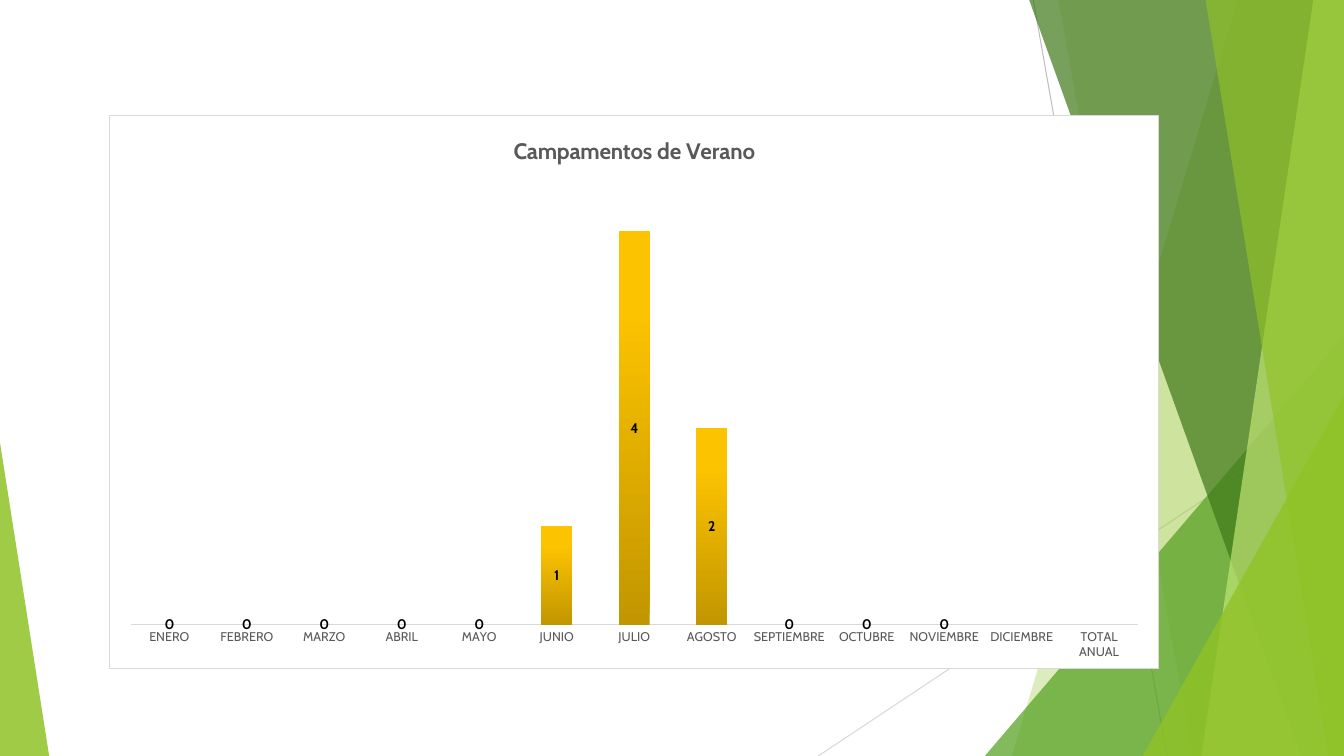
from lxml import etree
from pptx import Presentation
from pptx import util as u
from pptx.chart.data import CategoryChartData
from pptx.dml.color import RGBColor
from pptx.enum import chart as kinds, shapes
from pptx.oxml import parse_xml
from pptx.oxml.ns import nsdecls, qn

WHITE = RGBColor(0xFF, 0xFF, 0xFF)
BLACK = RGBColor(0, 0, 0)
GRAY = RGBColor(0x59, 0x59, 0x59)
PALE_GRAY = RGBColor(0xD9, 0xD9, 0xD9)
MID_GRAY = RGBColor(0xBF, 0xBF, 0xBF)
LIME = RGBColor(0x90, 0xC2, 0x26)
GREEN = RGBColor(0x54, 0xA0, 0x21)
DARK_GREEN = RGBColor(0x3F, 0x78, 0x19)
LIGHT_LIME = RGBColor(0xC0, 0xE4, 0x74)
GOLD_STOPS = [(0, RGBColor(0xC2, 0x96, 0x00)), (80, RGBColor(0xFC, 0xC3, 0x00)),
              (100, RGBColor(0xFD, 0xC4, 0x00))]
FONT = "Cabin"
WIDTH, HEIGHT = 33.87, 19.05

MONTHS = ["ENERO", "FEBRERO", "MARZO", "ABRIL", "MAYO", "JUNIO", "JULIO", "AGOSTO",
          "SEPTIEMBRE", "OCTUBRE", "NOVIEMBRE", "DICIEMBRE", "TOTAL ANUAL"]
CAMPS = [0, 0, 0, 0, 0, 1, 4, 2, 0, 0, 0, None, None]


def paint(shape, color, opacity):
    """Fill a shape without outline; opacity is a percentage."""
    shape.shadow.inherit = False
    shape.line.fill.background()
    shape.fill.solid()
    shape.fill.fore_color.rgb = color
    tint = shape.fill._xPr.find(".//" + qn("a:srgbClr"))
    etree.SubElement(tint, qn("a:alpha")).set("val", str(opacity * 1000))


def add_line(page, start, end, color):
    line = page.shapes.add_connector(shapes.MSO_CONNECTOR.STRAIGHT,
                                     *(u.Cm(value) for value in start + end))
    line.line.color.rgb = color
    line.line.width = u.Pt(0.75)
    etree.SubElement(line._element.spPr, qn("a:effectLst"))


def add_band(page, top_x, bottom_x, color, opacity):
    """Add a band from a slanted left edge to the right side of the slide."""
    top = -0.02
    corners = [(WIDTH, top), (WIDTH, HEIGHT), (bottom_x, HEIGHT)]
    builder = page.shapes.build_freeform(u.Cm(top_x), u.Cm(top))
    builder.add_line_segments([(u.Cm(x), u.Cm(y)) for x, y in corners])
    paint(builder.convert_to_shape(), color, opacity)


def add_triangle(page, left, top, width, apex, color, opacity):
    """Add a triangle standing on the bottom of the slide."""
    triangle = page.shapes.add_shape(shapes.MSO_SHAPE.ISOSCELES_TRIANGLE, u.Cm(left),
                                     u.Cm(top), u.Cm(width), u.Cm(HEIGHT - top))
    triangle.adjustments[0] = apex
    paint(triangle, color, opacity)


def add_decoration(page):
    add_line(page, (26.04, 0), (29.41, HEIGHT), MID_GRAY)
    add_line(page, (WIDTH, 10.24), (20.62, HEIGHT), PALE_GRAY)
    add_band(page, 31.19, 25.5, LIME, 30)
    add_band(page, 26.67, 30.05, LIME, 20)
    add_triangle(page, 24.82, 8.46, WIDTH - 24.82, 1, GREEN, 72)
    add_band(page, 25.93, 32.79, DARK_GREEN, 70)
    add_band(page, 33.1, 30.28, LIGHT_LIME, 70)
    add_band(page, 30.38, 33.48, LIME, 65)
    add_triangle(page, 28.8, 9.98, WIDTH - 28.8, 1, LIME, 80)
    add_triangle(page, 0, 11.15, 1.24, 0, LIME, 85)


def set_font(font, size, color, bold=False):
    font.name = FONT
    font.size = u.Pt(size)
    font.bold = bold
    font.color.rgb = color


def frame_chart(chart):
    """Give the chart a white, bordered background and a fixed plot area."""
    chart_node = chart.element.find(qn("c:chart"))
    chart_node.addnext(parse_xml(
        f'<c:spPr {nsdecls("c", "a")}>'
        f'<a:solidFill><a:srgbClr val="{WHITE}"/></a:solidFill>'
        f'<a:ln w="{u.Pt(0.75)}"><a:solidFill><a:srgbClr val="{PALE_GRAY}"/></a:solidFill></a:ln>'
        '</c:spPr>'))
    plot_area = chart_node.find(qn("c:plotArea"))
    for layout in plot_area.findall(qn("c:layout")):
        plot_area.remove(layout)
    places = "".join(f'<c:{key} val="{value}"/>' for key, value in
                     [("x", 0.02), ("y", 0.12), ("w", 0.96), ("h", 0.8)])
    plot_area.insert(0, parse_xml(
        f'<c:layout {nsdecls("c")}><c:manualLayout><c:layoutTarget val="inner"/>'
        f'<c:xMode val="edge"/><c:yMode val="edge"/>{places}</c:manualLayout></c:layout>'))


def fill_bars(series):
    """Shade the bars in gold, from dark at the foot to bright at the top."""
    series.format.fill.gradient()
    gradient = series.format.fill._xPr.find(qn("a:gradFill"))
    stops = "".join(f'<a:gs pos="{place * 1000}"><a:srgbClr val="{color}"/></a:gs>'
                    for place, color in GOLD_STOPS)
    gradient.getparent().replace(gradient, parse_xml(
        f'<a:gradFill {nsdecls("a")}><a:gsLst>{stops}</a:gsLst>'
        '<a:lin ang="16200000" scaled="0"/></a:gradFill>'))


def add_camps_chart(page, left, top, width, height):
    data = CategoryChartData()
    data.categories = MONTHS
    data.add_series("Series 1", CAMPS)
    chart = page.shapes.add_chart(kinds.XL_CHART_TYPE.COLUMN_STACKED, u.Cm(left), u.Cm(top),
                                  u.Cm(width), u.Cm(height), data).chart
    set_font(chart.font, 10, BLACK)
    chart.has_legend = False
    frame_chart(chart)

    chart.has_title = True
    chart.chart_title.include_in_layout = False
    para = chart.chart_title.text_frame.paragraphs[0]
    para.text = "Campamentos de Verano"
    set_font(para.font, 16, GRAY, bold=True)

    months = chart.category_axis
    months.major_tick_mark = kinds.XL_TICK_MARK.NONE
    months.format.line.color.rgb = PALE_GRAY
    months.format.line.width = u.Pt(1)
    set_font(months.tick_labels.font, 9, GRAY)
    counts = chart.value_axis
    counts.visible = False
    counts.has_major_gridlines = False
    counts.minimum_scale, counts.maximum_scale = 0, 4.5

    plot = chart.plots[0]
    plot.gap_width, plot.overlap = 150, 100
    plot.vary_by_categories = False
    fill_bars(plot.series[0])
    labels = plot.series[0].data_labels
    labels.show_value = True
    labels.position = kinds.XL_LABEL_POSITION.CENTER
    set_font(labels.font, 10, BLACK, bold=True)


def main():
    deck = Presentation()
    deck.slide_width, deck.slide_height = u.Cm(WIDTH), u.Cm(HEIGHT)
    page = deck.slides.add_slide(deck.slide_layouts[6])
    add_decoration(page)
    add_camps_chart(page, 2.75, 2.9, 26.47, 13.97)
    deck.save("out.pptx")


if __name__ == "__main__":
    main()
